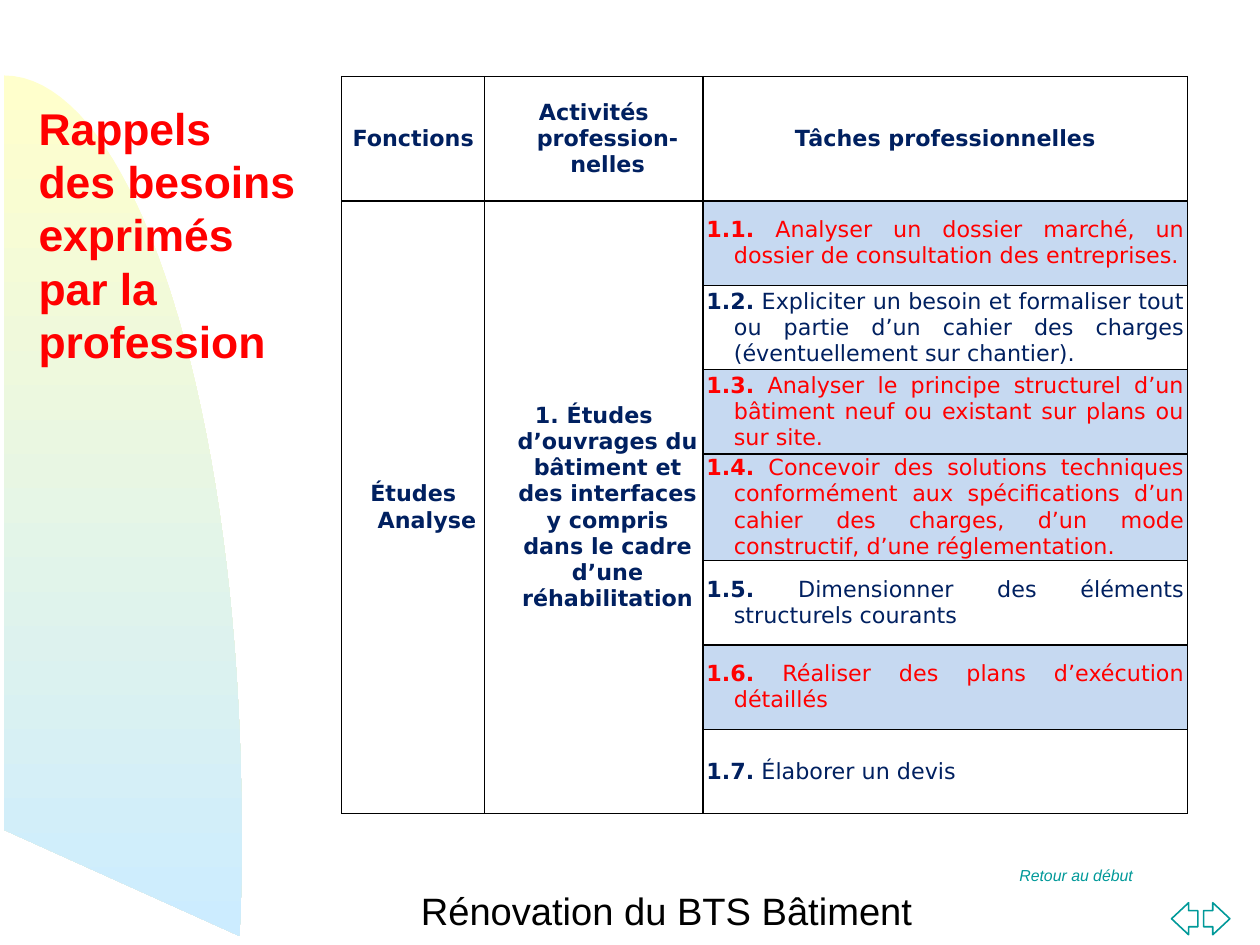
"""Build a slide listing the professional tasks of a building diploma."""
from lxml import etree
from pptx import Presentation
from pptx import util as u
from pptx.dml.color import RGBColor
from pptx.enum import shapes, text
from pptx.oxml import ns

W, H = u.Cm(28), u.Cm(21)
RED = RGBColor(0xFF, 0x00, 0x00)
NAVY = RGBColor(0x00, 0x20, 0x60)
TEAL = RGBColor(0x00, 0x99, 0x99)
BLACK = RGBColor(0x00, 0x00, 0x00)
WHITE = RGBColor(0xFF, 0xFF, 0xFF)
PALE_BLUE = RGBColor(0xC6, 0xD9, 0xF1)
SKY = RGBColor(0xCC, 0xEC, 0xFF)
CREAM = RGBColor(0xFF, 0xFF, 0xCC)

COLUMNS = (11.34, 17.33, 38.46)
HEADERS = ("Fonctions", "Activités profession-nelles", "Tâches professionnelles")
GROUPS = (
    "Études Analyse",
    "1. Études d’ouvrages du bâtiment et des interfaces y compris "
    "dans le cadre d’une réhabilitation",
)
TASKS = (
    "Analyser un dossier marché, un dossier de consultation des entreprises.",
    "Expliciter un besoin et formaliser tout ou partie d’un cahier des charges "
    "(éventuellement sur chantier).",
    "Analyser le principe structurel d’un bâtiment neuf ou existant sur plans ou sur site.",
    "Concevoir des solutions techniques conformément aux spécifications d’un cahier "
    "des charges, d’un mode constructif, d’une réglementation. ",
    "Dimensionner des éléments structurels courants ",
    "Réaliser des plans d’exécution détaillés",
    "Élaborer un devis",
)
ROWS = (13.18,) + (8.92,) * len(TASKS)
HIGHLIGHTED = {1, 3, 4, 6}


def across(share):
    """Convert a percentage of the slide width to a length."""
    return u.Emu(round(W * share / 100))


def down(share):
    """Convert a percentage of the slide height to a length."""
    return u.Emu(round(H * share / 100))


def box(x, y, w, h):
    """Convert percentages of the slide to left, top, width and height."""
    return across(x), down(y), across(w), down(h)


def style(r, size, font, color, bold=False, italic=False):
    """Format the font of a run."""
    r.font.size, r.font.name = u.Pt(size), font
    r.font.bold, r.font.italic = bold, italic
    r.font.color.rgb = color


def curve(points, steps=40):
    """Return points along a cubic curve, without its start."""
    result = []
    for i in range(1, steps + 1):
        t = i / steps
        weights = ((1 - t) ** 3, 3 * t * (1 - t) ** 2, 3 * t * t * (1 - t), t ** 3)
        x, y = (sum(k * p[axis] for k, p in zip(weights, points)) for axis in (0, 1))
        result.append((across(x), down(y)))
    return result


def add_sail(s):
    """Draw the curved gradient background at the left edge."""
    top, shoulder, tip = (0.3, 7.98), (19.18, 87.8), (19, 99.03)
    outline = curve((top, (10.71, 7.98), (19.18, 43.77), shoulder))
    outline += curve((shoulder, (19.18, 91.54), (19.18, 95.28), tip))
    outline.append((across(0.3), down(87.8)))
    builder = s.shapes.build_freeform(across(top[0]), down(top[1]))
    builder.add_line_segments(outline, close=True)
    sp = builder.convert_to_shape()
    sp.shadow.inherit = False
    sp.line.fill.background()
    sp.fill.gradient()
    sp.fill.gradient_angle = 270
    for stop, color in zip(sp.fill.gradient_stops, (CREAM, SKY)):
        stop.color.rgb = color


def add_arrow(s, kind, x):
    """Draw one outlined navigation arrow."""
    sp = s.shapes.add_shape(kind, *box(x, 95.53, 2.09, 3.39))
    sp.shadow.inherit = False
    sp.adjustments[0], sp.adjustments[1] = 0.5, 0.65
    sp.fill.solid()
    sp.fill.fore_color.rgb = WHITE
    sp.line.color.rgb = TEAL
    sp.line.width = u.Pt(1)


def add_label(s, words, place, size, color, align, italic=False):
    """Add a line of text in a text box."""
    tf = s.shapes.add_textbox(*place).text_frame
    tf.word_wrap = True
    tf.text = words
    p = tf.paragraphs[0]
    p.alignment = align
    style(p.runs[0], size, "Arial", color, italic=italic)


def add_title(s):
    """Place and format the slide title in front of the background."""
    sp = s.shapes.title
    s.shapes._spTree.append(sp._element)
    sp.left, sp.top, sp.width, sp.height = box(2.15, 10.04, 23.23, 33.37)
    tf = sp.text_frame
    tf.text = "Rappels \vdes besoins exprimés par la profession"
    tf.word_wrap = True
    tf.auto_size = text.MSO_AUTO_SIZE.NONE
    tf.vertical_anchor = text.MSO_ANCHOR.TOP
    p = tf.paragraphs[0]
    p.alignment = text.PP_ALIGN.LEFT
    p.line_spacing = 1.0
    for r in p.runs:
        style(r, 28, "Arial", RED, bold=True)


def add_borders(cell):
    """Give a cell thin black borders."""
    tcPr = cell._tc.get_or_add_tcPr()
    for i, side in enumerate(("lnL", "lnR", "lnT", "lnB")):
        ln = etree.Element(ns.qn(f"a:{side}"), w=str(u.Pt(1)))
        fill = etree.SubElement(ln, ns.qn("a:solidFill"))
        etree.SubElement(fill, ns.qn("a:srgbClr"), val=str(BLACK))
        tcPr.insert(i, ln)


def fill_cell(cell, parts, align, color=NAVY):
    """Write text parts in a cell, the first one in bold."""
    cell.vertical_anchor = text.MSO_ANCHOR.MIDDLE
    p = cell.text_frame.paragraphs[0]
    p.alignment = align
    pPr = p._p.get_or_add_pPr()
    pPr.set("marL", str(u.Inches(0.24)))
    pPr.set("indent", str(u.Inches(-0.24)))
    for i, part in enumerate(parts):
        r = p.add_run()
        r.text = part
        style(r, 14, "DejaVu Sans", color, bold=i == 0)


def add_task_table(s):
    """Add the table of functions, activities and tasks."""
    place = box(27.13, 8.1, sum(COLUMNS), sum(ROWS))
    table = s.shapes.add_table(len(ROWS), len(COLUMNS), *place).table
    table.first_row = table.horz_banding = False
    for column, share in zip(table.columns, COLUMNS):
        column.width = across(share)
    for row, share in zip(table.rows, ROWS):
        row.height = down(share)
    for cell in table.iter_cells():
        cell.margin_left = cell.margin_right = u.Inches(0.03)
        cell.margin_top = cell.margin_bottom = 0
        cell.fill.background()
        add_borders(cell)
    center = text.PP_ALIGN.CENTER
    for j, header in enumerate(HEADERS):
        fill_cell(table.cell(0, j), [header], center)
    for j, group in enumerate(GROUPS):
        table.cell(1, j).merge(table.cell(len(TASKS), j))
        fill_cell(table.cell(1, j), [group], center)
    for i, task in enumerate(TASKS, 1):
        cell = table.cell(i, 2)
        color = RED if i in HIGHLIGHTED else NAVY
        fill_cell(cell, [f"1.{i}.", f" {task}"], text.PP_ALIGN.JUSTIFY, color)
        if i in HIGHLIGHTED:
            cell.fill.solid()
            cell.fill.fore_color.rgb = PALE_BLUE


def main():
    """Assemble and save the slide."""
    prs = Presentation()
    prs.slide_width, prs.slide_height = W, H
    s = prs.slides.add_slide(prs.slide_layouts[5])
    add_sail(s)
    add_label(s, "Retour au début", box(80.01, 91.05, 16.79, 8.83),
              10, TEAL, text.PP_ALIGN.LEFT, italic=True)
    add_arrow(s, shapes.MSO_SHAPE.LEFT_ARROW, 92.98)
    add_arrow(s, shapes.MSO_SHAPE.RIGHT_ARROW, 95.52)
    add_task_table(s)
    add_title(s)
    add_label(s, "Rénovation du BTS Bâtiment", box(28.31, 93.3, 49.18, 6.6),
              24, BLACK, text.PP_ALIGN.CENTER)
    prs.save("out.pptx")


if __name__ == "__main__":
    main()
